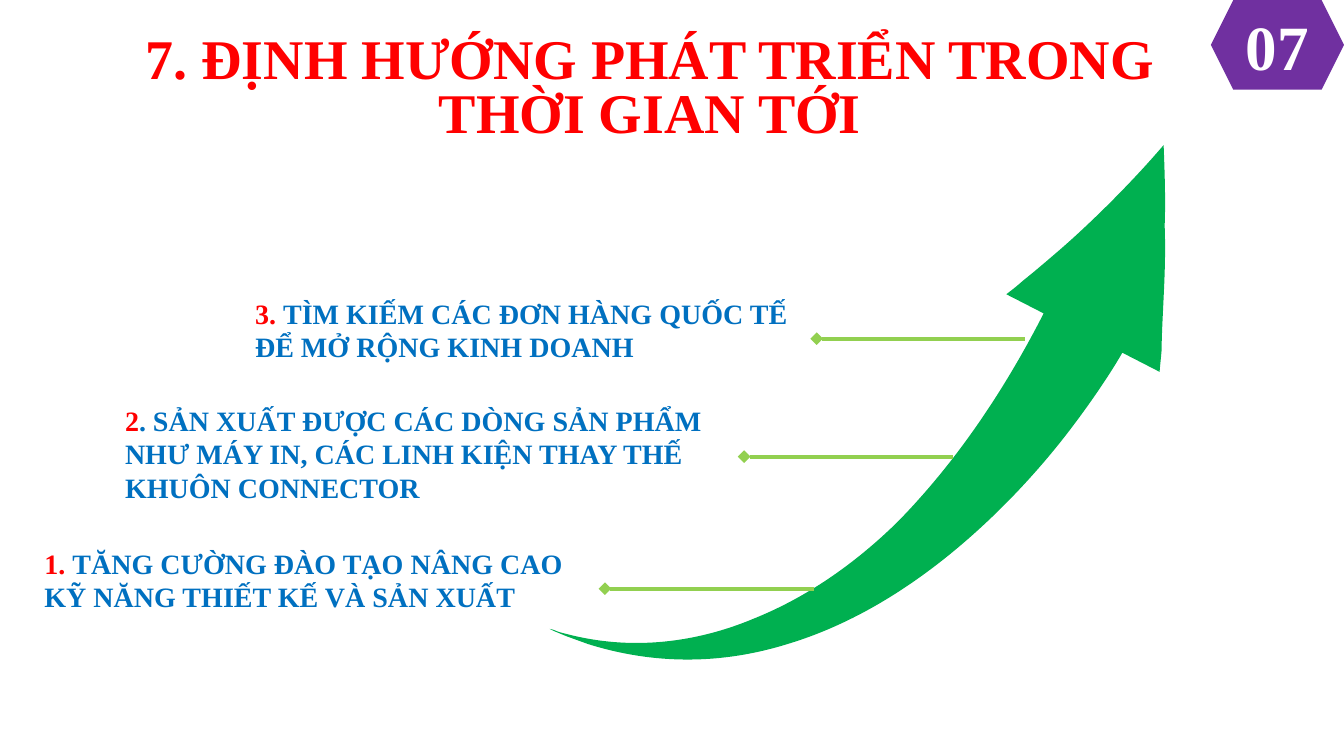
import math
import pptx
import pptx.util
import pptx.dml.color
import pptx.enum.shapes
import pptx.enum.text
import pptx.oxml
import pptx.oxml.ns

Inches = pptx.util.Inches
Pt = pptx.util.Pt
ALIGN = pptx.enum.text.PP_ALIGN
ANCHOR = pptx.enum.text.MSO_ANCHOR
NS = 'xmlns:a="http://schemas.openxmlformats.org/drawingml/2006/main"'


def rgb(value):
    return pptx.dml.color.RGBColor.from_string(value)


def turn(point, center, degrees):
    angle = math.radians(degrees)
    x, y = point[0] - center[0], point[1] - center[1]
    return (center[0] + x * math.cos(angle) - y * math.sin(angle),
            center[1] + x * math.sin(angle) + y * math.cos(angle))


class SlideBuilder:
    font = "Times New Roman"
    red, blue, green = "FF0000", "0070C0", "00B050"
    lime, purple, white = "92D050", "7030A0", "FFFFFF"

    def __init__(self, prs):
        self.slide = prs.slides.add_slide(prs.slide_layouts[5])

    def style(self, r, size, color):
        r.font.name = self.font
        r.font.size = Pt(size)
        r.font.bold = True
        r.font.color.rgb = rgb(color)

    def paint(self, sp, color):
        sp.shadow.inherit = False
        sp.fill.solid()
        sp.fill.fore_color.rgb = rgb(color)
        sp.line.fill.background()

    def title(self, text, left, top, width, height):
        sp = self.slide.shapes.title
        sp.left, sp.top = Inches(left), Inches(top)
        sp.width, sp.height = Inches(width), Inches(height)
        tf = sp.text_frame
        tf.text = text
        tf.word_wrap = True
        tf.auto_size = pptx.enum.text.MSO_AUTO_SIZE.NONE
        tf.vertical_anchor = ANCHOR.TOP
        p = tf.paragraphs[0]
        p.alignment = ALIGN.CENTER
        p.line_spacing = 0.8
        p.space_before = Pt(0)
        self.style(p.runs[0], 40, self.red)

    def badge(self, text, left, top, width, height):
        sp = self.slide.shapes.add_shape(
            pptx.enum.shapes.MSO_SHAPE.HEXAGON,
            Inches(left), Inches(top), Inches(width), Inches(height))
        self.paint(sp, self.purple)
        tf = sp.text_frame
        tf.text = text
        tf.word_wrap = False
        tf.vertical_anchor = ANCHOR.MIDDLE
        tf.margin_left = tf.margin_right = tf.margin_top = tf.margin_bottom = 0
        p = tf.paragraphs[0]
        p.alignment = ALIGN.CENTER
        self.style(p.runs[0], 45, self.white)

    def outline(self, start, segments, center, rotation, color):
        points = [turn(point, center, -rotation)
                  for point in [start] + [pt for seg in segments for pt in zip(seg[::2], seg[1::2])]]
        points = [(Inches(x), Inches(y)) for x, y in points]
        ff = self.slide.shapes.build_freeform(*points[0], scale=1.0)
        ff.add_line_segments(points[1:], close=True)
        sp = ff.convert_to_shape()
        lines = iter(list(sp._element.iter(pptx.oxml.ns.qn("a:lnTo"))))
        for seg in segments:
            line = next(lines)
            if len(seg) == 6:
                curve = pptx.oxml.parse_xml(f'<a:cubicBezTo {NS}/>')
                line.addprevious(curve)
                for part in (line, next(lines), next(lines)):
                    curve.append(part[0])
                    part.getparent().remove(part)
        sp.rotation = rotation
        self.paint(sp, color)

    def goal(self, number, text, left, top, width, height):
        sp = self.slide.shapes.add_textbox(
            Inches(left), Inches(top), Inches(width), Inches(height))
        tf = sp.text_frame
        tf.word_wrap = True
        tf.margin_left = tf.margin_right = tf.margin_top = tf.margin_bottom = 0
        p = tf.paragraphs[0]
        for part, color in ((number, self.red), (text, self.blue)):
            r = p.add_run()
            r.text = part
            self.style(r, 20, color)

    def pointer(self, left, y, length=2.07):
        cx = self.slide.shapes.add_connector(
            pptx.enum.shapes.MSO_CONNECTOR.STRAIGHT,
            Inches(left), Inches(y), Inches(left + length), Inches(y))
        cx.line.color.rgb = rgb(self.lime)
        cx.line.width = Pt(3)
        cx.line._get_or_add_ln().append(
            pptx.oxml.parse_xml(f'<a:headEnd {NS} type="diamond"/>'))
        cx._element.spPr.append(pptx.oxml.parse_xml(f'<a:effectLst {NS}/>'))


ARROW_CENTER = (8.6, 3.96)
ARROW_TIP = (11.54, 1.44)
HEAD_RIGHT = [
    (11.55, 1.71, 11.56, 1.98, 11.55, 2.24),
    (11.56, 2.5, 11.55, 2.74, 11.54, 2.95),
    (11.53, 3.16, 11.52, 3.34, 11.52, 3.47),
    (11.51, 3.59, 11.5, 3.67, 11.5, 3.69),
    (11.13, 3.5),
]
OUTER_EDGE = [
    (11.08, 3.59, 10.91, 3.87, 10.63, 4.24),
    (10.35, 4.61, 9.96, 5.05, 9.48, 5.45),
    (9, 5.85, 8.44, 6.2, 7.81, 6.39),
    (7.2, 6.58, 6.53, 6.61, 5.83, 6.39),
]
TAIL = [(5.72, 6.35), (5.61, 6.31), (5.49, 6.26), (5.45, 6.24)]
INNER_EDGE = [
    (5.47, 6.24, 5.48, 6.25, 5.49, 6.25),
    (5.51, 6.26, 5.52, 6.26, 5.54, 6.27),
    (5.72, 6.32, 5.98, 6.38, 6.31, 6.38),
    (6.64, 6.38, 7.04, 6.32, 7.47, 6.14),
    (7.92, 5.96, 8.41, 5.66, 8.9, 5.18),
    (9.39, 4.68, 9.89, 4.01, 10.35, 3.11),
]
HEAD_LEFT = [
    (9.98, 2.92),
    (9.99, 2.91, 10.05, 2.87, 10.14, 2.79),
    (10.24, 2.71, 10.37, 2.6, 10.52, 2.47),
    (10.67, 2.34, 10.84, 2.18, 11.01, 2.01),
    (11.19, 1.83, 11.37, 1.64, 11.54, 1.44),
]
GOALS = [
    ("1. ", "TĂNG CƯỜNG ĐÀO TẠO NÂNG CAO KỸ NĂNG THIẾT KẾ VÀ SẢN XUẤT",
     (0.44, 5.42, 5.35, 0.87), (6, 5.84)),
    ("2", ". SẢN XUẤT ĐƯỢC CÁC DÒNG SẢN PHẨM NHƯ MÁY IN, CÁC LINH KIỆN THAY THẾ KHUÔN CONNECTOR",
     (1.24, 4, 6.14, 1.1), (7.38, 4.53)),
    ("3. ", "TÌM KIẾM CÁC ĐƠN HÀNG QUỐC TẾ ĐỂ MỞ RỘNG KINH DOANH",
     (2.53, 2.94, 5.34, 0.87), (8.1, 3.36)),
]


def main():
    prs = pptx.Presentation()
    prs.slide_width, prs.slide_height = Inches(13.33), Inches(7.5)
    s = SlideBuilder(prs)
    s.title("7. ĐỊNH HƯỚNG PHÁT TRIỂN TRONG THỜI GIAN TỚI", 0.88, 0.31, 11.13, 1.1)
    s.badge("07", 12.01, 0, 1.32, 0.89)
    s.outline(ARROW_TIP, HEAD_RIGHT + OUTER_EDGE + TAIL + INNER_EDGE + HEAD_LEFT,
              ARROW_CENTER, 7.4, s.green)
    for number, text, box, start in GOALS:
        s.goal(number, text, *box)
        s.pointer(*start)
    prs.save("out.pptx")


if __name__ == "__main__":
    main()
